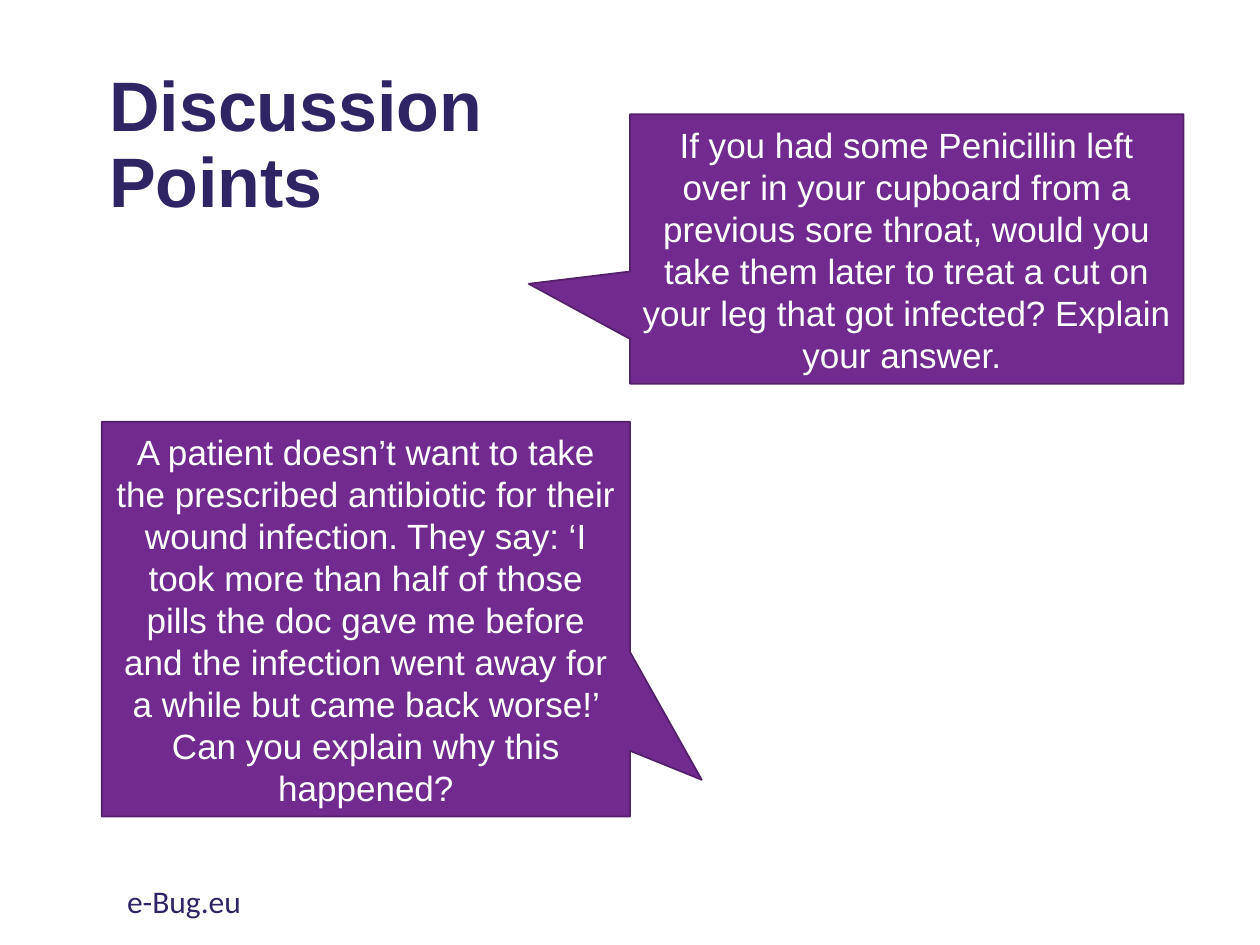
from pptx import Presentation
from pptx.dml.color import RGBColor
from pptx.enum.shapes import MSO_SHAPE
from pptx.enum.text import MSO_ANCHOR, PP_ALIGN
from pptx.util import Pt

CALLOUT = MSO_SHAPE.RECTANGULAR_CALLOUT
TOP, MIDDLE = MSO_ANCHOR.TOP, MSO_ANCHOR.MIDDLE
LEFT, CENTER = PP_ALIGN.LEFT, PP_ALIGN.CENTER

NAVY = RGBColor(0x30, 0x25, 0x64)
PURPLE = RGBColor(0x71, 0x2B, 0x8F)
DARK_PURPLE = RGBColor(0x54, 0x20, 0x6A)
WHITE = RGBColor(0xFF, 0xFF, 0xFF)

# Each callout: box, pointer tip (offset from centre as share of size), text
CALLOUTS = [
    ((360, 65.3, 316.3, 154), (-0.683, 0.129),
     "If you had some Penicillin left over in your cupboard from a previous "
     "sore throat, would you take them later to treat a cut on your leg that "
     "got infected? Explain your answer. "),
    ((58.2, 241, 301.8, 225.6), (0.636, 0.407),
     "A patient doesn’t want to take the prescribed antibiotic for their wound "
     "infection. They say: ‘I took more than half of those pills the doc gave "
     "me before and the infection went away for a while but came back worse!’ "
     "Can you explain why this happened?"),
]


def write_text(shape, text, size, color, font="Arial", bold=False,
               align=LEFT, anchor=TOP, line_spacing=1.0):
    frame = shape.text_frame
    frame.word_wrap = True
    frame.vertical_anchor = anchor
    para = frame.paragraphs[0]
    para.alignment = align
    para.line_spacing = line_spacing
    span = para.add_run()
    span.text = text
    span.font.name = font
    span.font.size = Pt(size)
    span.font.bold = bold
    span.font.color.rgb = color


def add_text(page, box, text, **text_format):
    shape = page.shapes.add_textbox(*map(Pt, box))
    write_text(shape, text, **text_format)


def add_callout(page, box, tip, text):
    shape = page.shapes.add_shape(CALLOUT, *map(Pt, box))
    shape.shadow.inherit = False
    shape.adjustments[0], shape.adjustments[1] = tip
    shape.fill.solid()
    shape.fill.fore_color.rgb = PURPLE
    shape.line.color.rgb = DARK_PURPLE
    shape.line.width = Pt(1)
    write_text(shape, text, size=20, color=WHITE, align=CENTER, anchor=MIDDLE)


def main():
    deck = Presentation()
    deck.slide_width, deck.slide_height = Pt(720), Pt(540)
    page = deck.slides.add_slide(deck.slide_layouts[6])

    # Title
    add_text(page, (55.4, 31.7, 263.5, 104.4), "Discussion Points", size=40,
             color=NAVY, bold=True, anchor=MIDDLE, line_spacing=0.9)

    # Discussion questions
    for box, tip, text in CALLOUTS:
        add_callout(page, box, tip, text)

    # Footer
    add_text(page, (65.5, 500.4, 243.4, 28.8), "e-Bug.eu", size=18,
             color=NAVY, font="Calibri")

    deck.save("out.pptx")


if __name__ == "__main__":
    main()
